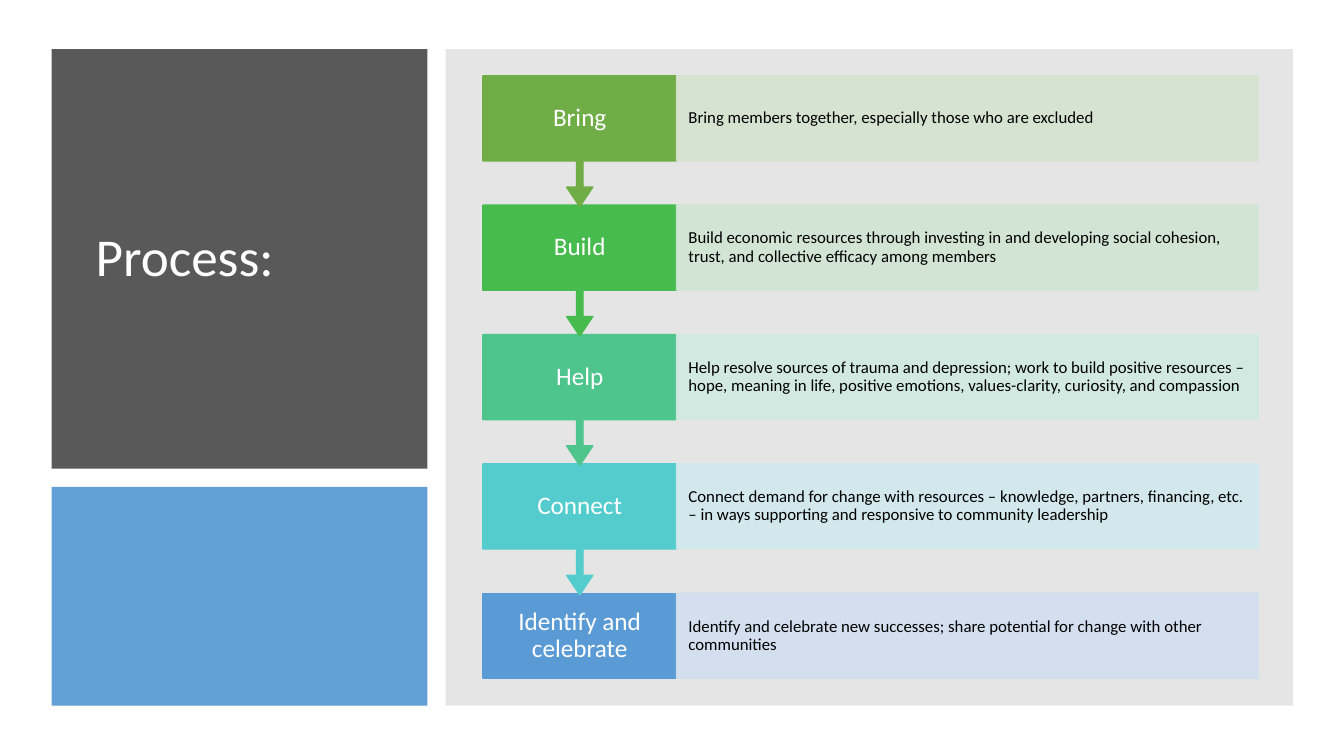
"""Build the Process slide: a title panel beside five linked steps."""
from lxml import etree
from pptx import Presentation
from pptx import util as u
from pptx.dml.color import RGBColor
from pptx.enum import shapes, text
from pptx.oxml.ns import qn


def paint(part, color, opacity=100):
    part.solid()
    part.fore_color.rgb = RGBColor.from_string(color)
    if opacity < 100:
        for srgb in part._xPr.iter(qn("a:srgbClr")):
            etree.SubElement(srgb, qn("a:alpha")).set("val", str(opacity * 1000))


def write(words, left, top, width, height, size, color="FFFFFF",
          align=text.PP_ALIGN.LEFT, inset_x=0.25, inset_y=0.13):
    frame = slide.shapes.add_textbox(u.Cm(left), u.Cm(top), u.Cm(width), u.Cm(height)).text_frame
    frame.word_wrap = True
    frame.vertical_anchor = text.MSO_ANCHOR.MIDDLE
    frame.margin_left = frame.margin_right = u.Cm(inset_x)
    frame.margin_top = frame.margin_bottom = u.Cm(inset_y)
    paragraph = frame.paragraphs[0]
    paragraph.alignment = align
    paragraph.line_spacing = 0.9
    run = paragraph.add_run()
    run.text = words
    run.font.name = "Calibri"
    run.font.size = u.Pt(size)
    run.font.color.rgb = RGBColor.from_string(color)


deck = Presentation()
deck.slide_width, deck.slide_height = u.Cm(33.87), u.Cm(19.05)
slide = deck.slides.add_slide(deck.slide_layouts[6])

panels = [
    (1.3, 1.24, 9.47, 10.57, "595959", 100),
    (1.3, 12.27, 9.47, 5.51, "5B9BD5", 95),
    (11.23, 1.24, 21.36, 16.54, "808080", 20),
]
for left, top, width, height, color, opacity in panels:
    panel = slide.shapes.add_shape(shapes.MSO_SHAPE.RECTANGLE,
                                   u.Cm(left), u.Cm(top), u.Cm(width), u.Cm(height))
    panel.shadow.inherit = False
    paint(panel.fill, color, opacity)
    panel.line.fill.background()

write("Process:", 2.16, 2.03, 7.9, 8.99, 38)

steps = [
    ("Bring", "70AD47", "D5E3CF",
     "Bring members together, especially those who are excluded"),
    ("Build", "48BB4F", "D0E6D4",
     "Build economic resources through investing in and developing social cohesion, "
     "trust, and collective efficacy among members"),
    ("Help", "4DC58D", "D0EAE1",
     "Help resolve sources of trauma and depression; work to build positive resources – "
     "hope, meaning in life, positive emotions, values-clarity, curiosity, and compassion"),
    ("Connect", "54CCCD", "D1E9ED",
     "Connect demand for change with resources – knowledge, partners, financing, etc. "
     "– in ways supporting and responsive to community leadership"),
    ("Identify and celebrate", "5B9BD5", "D2DEEF",
     "Identify and celebrate new successes; share potential for change with other communities"),
]
first_top, step_pitch, step_height, arrow_height = 1.91, 3.26, 2.14, 3.3
label_left, label_width, detail_width = 12.17, 4.88, 14.66
detail_left = label_left + label_width
last = len(steps) - 1

for index, (label, color, tint, detail) in reversed(list(enumerate(steps))):
    top = first_top + index * step_pitch
    if index == last:
        outline, label_height = shapes.MSO_SHAPE.RECTANGLE, step_height
    else:
        outline, label_height = shapes.MSO_SHAPE.UP_ARROW_CALLOUT, arrow_height
    label_box = slide.shapes.add_shape(outline, u.Cm(label_left), u.Cm(top),
                                       u.Cm(label_width), u.Cm(label_height))
    if index < last:
        label_box.rotation = 180
        for number, share in enumerate((0.05, 0.1, 0.15, 0.65)):
            label_box.adjustments[number] = share
    detail_box = slide.shapes.add_shape(shapes.MSO_SHAPE.RECTANGLE, u.Cm(detail_left), u.Cm(top),
                                        u.Cm(detail_width), u.Cm(step_height))
    for box, shade, opacity in ((label_box, color, 100), (detail_box, tint, 90)):
        box.shadow.inherit = False
        box.line.width = u.Pt(1)
        paint(box.fill, shade, opacity)
        paint(box.line.fill, shade, opacity)
    write(label, label_left, top, label_width, step_height, 18,
          align=text.PP_ALIGN.CENTER, inset_x=0.35, inset_y=0.35)
    write(detail, detail_left, top, detail_width, step_height, 12,
          color="000000", inset_x=0.3, inset_y=0.43)

deck.save("out.pptx")
